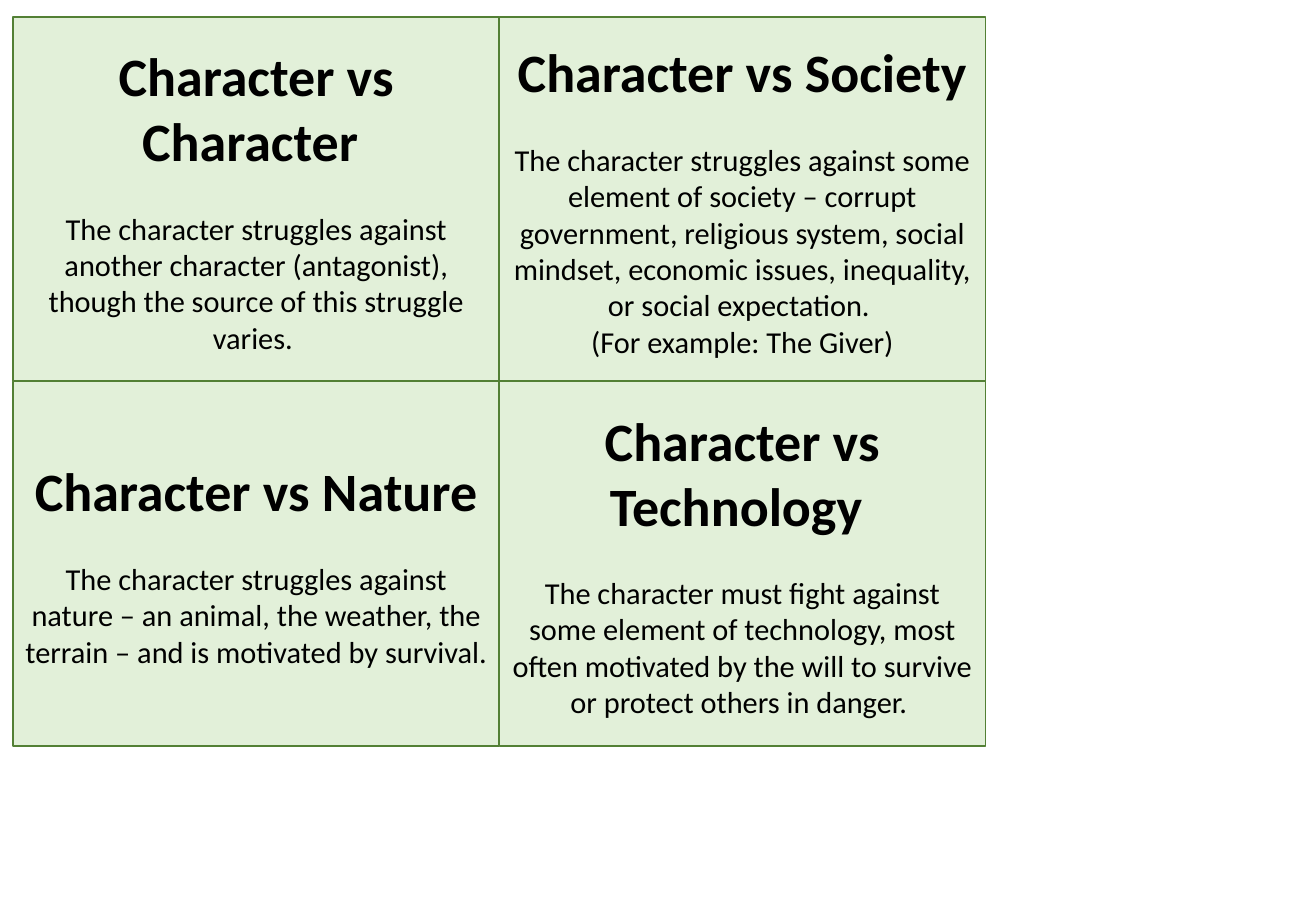
from pptx import Presentation
from pptx import util as u
from pptx.dml import color
from pptx.enum import shapes, text

CONFLICTS = [
    ("Character vs Character ", [
        "The character struggles against another character (antagonist), "
        "though the source of this struggle varies. "]),
    ("Character vs Society", [
        "The character struggles against some element of society – corrupt "
        "government, religious system, social mindset, economic issues, "
        "inequality, or social expectation. ",
        "(For example: The Giver)"]),
    ("Character vs Nature", [
        "The character struggles against nature – an animal, the weather, "
        "the terrain – and is motivated by survival. "]),
    ("Character vs Technology ", [
        "The character must fight against some element of technology, most "
        "often motivated by the will to survive or protect others in danger. "]),
]


def rgb(value):
    return color.RGBColor.from_string(value)


def write_para(para, words, size, bold=False):
    para.text = words
    para.alignment = text.PP_ALIGN.CENTER
    para.font.name = "Calibri"
    para.font.size = u.Pt(size)
    para.font.bold = bold
    para.font.color.rgb = rgb("000000")


def add_card(page, left, top, width, height, title, body):
    card = page.shapes.add_shape(
        shapes.MSO_SHAPE.RECTANGLE,
        u.Inches(left), u.Inches(top), u.Inches(width), u.Inches(height))
    card.shadow.inherit = False
    card.fill.solid()
    card.fill.fore_color.rgb = rgb("E2F0D9")
    card.line.color.rgb = rgb("538035")
    card.line.width = u.Pt(1)
    frame = card.text_frame
    frame.word_wrap = True
    frame.vertical_anchor = text.MSO_ANCHOR.MIDDLE
    heading = frame.paragraphs[0]
    write_para(heading, title, 32, bold=True)
    heading.space_after = u.Pt(22)
    for words in body:
        write_para(frame.add_paragraph(), words, 18)


def add_card_grid(page, left, top, width, height, columns=2):
    card_width = width / columns
    card_height = height / (len(CONFLICTS) // columns)
    for index, (title, body) in enumerate(CONFLICTS):
        row, column = divmod(index, columns)
        add_card(page, left + column * card_width, top + row * card_height,
                 card_width, card_height, title, body)


def main():
    deck = Presentation()
    deck.slide_width = u.Inches(10.83)
    deck.slide_height = u.Inches(7.5)
    page = deck.slides.add_slide(deck.slide_layouts[6])
    add_card_grid(page, 0.11, 0.14, 8, 6)
    deck.save("out.pptx")


if __name__ == "__main__":
    main()
